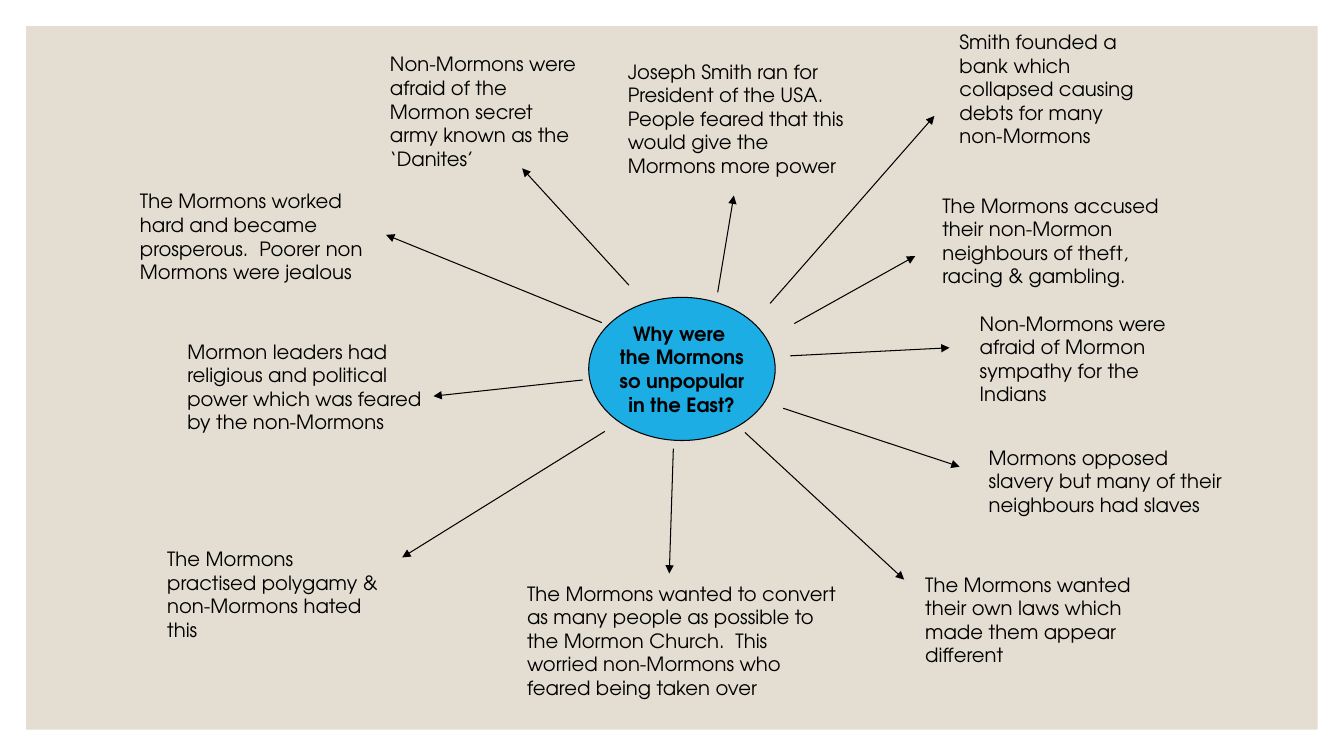
from dataclasses import dataclass

from lxml.etree import SubElement
from pptx import Presentation
from pptx.dml.color import RGBColor
from pptx.enum.shapes import MSO_CONNECTOR, MSO_SHAPE
from pptx.enum.text import MSO_ANCHOR, MSO_AUTO_SIZE, PP_ALIGN
from pptx.oxml.ns import qn
from pptx.util import Inches, Pt


@dataclass(frozen=True)
class Theme:
    font: str = "TeX Gyre Adventor"
    text_size: float = 14
    line_width: float = 0.75
    ink: str = "000000"
    panel: str = "E3DED1"
    hub: str = "1CADE4"


COLUMN = ROW = Inches(0.1)
COLUMNS, ROWS = 133.33, 75
MARGIN = 2.6

QUESTION = ["Why were ", "the Mormons", "so unpopular", "in the East?"]

REASONS = [
    ("Joseph Smith ran for President of the USA.  People feared that this would give the Mormons more power",
     (61.3, 5.4, 23.6, 12.9), (71.2, 29), (72.8, 19.4)),
    ("Smith founded a bank which collapsed causing debts for many non-Mormons",
     (94.2, 2.5, 20.8, 10.4), (76.4, 30.1), (92.7, 11.5)),
    ("The Mormons accused their non-Mormon neighbours of theft, racing & gambling.",
     (92.5, 18.7, 25.8, 8.1), (78.8, 32.1), (90.8, 25.4)),
    ("Non-Mormons were afraid of Mormon sympathy for the Indians",
     (96.2, 30.4, 24.2, 8.1), (78.4, 35.3), (94.2, 34.5)),
    ("Mormons opposed slavery but many of their neighbours had slaves",
     (97.1, 43.7, 25.3, 8.1), (77.7, 40.5), (95.2, 46.3)),
    ("The Mormons wanted their own laws which made them appear different",
     (90.8, 56.3, 22.5, 10.4), (73.9, 42.9), (89.7, 57.5)),
    ("The Mormons wanted to convert as many people as possible to the Mormon Church.  "
     "This worried non-Mormons who feared being taken over",
     (51.3, 57.2, 32.8, 12.8), (66.8, 44.5), (66.4, 56.9)),
    ("The Mormons practised polygamy & non-Mormons hated this",
     (15.6, 53.8, 23.2, 10.4), (60, 42.8), (39.9, 55.3)),
    ("Mormon leaders had religious and political power which was feared by the non-Mormons",
     (17.6, 33.2, 26.7, 10.6), (57.8, 37.7), (43, 39.3)),
    ("The Mormons worked hard and became prosperous.  Poorer non Mormons were jealous",
     (12.9, 18.3, 25.3, 10.4), (59.7, 32), (38.3, 23.3)),
    ("Non-Mormons were afraid of the Mormon secret army known as the ‘Danites’",
     (37.7, 4.7, 21.3, 12.8), (62.4, 28.3), (51.8, 16.7)),
]


def write(frame, lines, *, theme, bold=False, align=PP_ALIGN.LEFT,
          anchor=MSO_ANCHOR.TOP, wrap=True, fit=MSO_AUTO_SIZE.NONE):
    frame.word_wrap = wrap
    frame.auto_size = fit
    frame.vertical_anchor = anchor
    for index, line in enumerate(lines):
        paragraph = frame.add_paragraph() if index else frame.paragraphs[0]
        paragraph.alignment = align
        run = paragraph.add_run()
        run.text = line
        run.font.name = theme.font
        run.font.size = Pt(theme.text_size)
        run.font.bold = bold
        run.font.color.rgb = RGBColor.from_string(theme.ink)


class SpiderDiagram:
    def __init__(self, slide, theme):
        self.slide = slide
        self.theme = theme

    def place(self, left, top, width, height):
        return (round(left * COLUMN), round(top * ROW),
                round(width * COLUMN), round(height * ROW))

    def outline(self, line):
        line.color.rgb = RGBColor.from_string(self.theme.ink)
        line.width = Pt(self.theme.line_width)

    def filled(self, kind, box, colour):
        shape = self.slide.shapes.add_shape(kind, *self.place(*box))
        shape.shadow.inherit = False
        shape.fill.solid()
        shape.fill.fore_color.rgb = RGBColor.from_string(colour)
        return shape

    def panel(self, box):
        shape = self.filled(MSO_SHAPE.RECTANGLE, box, self.theme.panel)
        shape.line.fill.background()

    def hub(self, box, lines):
        shape = self.filled(MSO_SHAPE.OVAL, box, self.theme.hub)
        self.outline(shape.line)
        write(shape.text_frame, lines, theme=self.theme, bold=True,
              align=PP_ALIGN.CENTER, anchor=MSO_ANCHOR.MIDDLE, wrap=False)

    def label(self, box, text):
        shape = self.slide.shapes.add_textbox(*self.place(*box))
        write(shape.text_frame, [text], theme=self.theme,
              fit=MSO_AUTO_SIZE.SHAPE_TO_FIT_TEXT)

    def arrow(self, start, end):
        connector = self.slide.shapes.add_connector(
            MSO_CONNECTOR.STRAIGHT, *self.place(*start, *end))
        self.outline(connector.line)
        properties = connector.element.spPr
        SubElement(properties.find(qn("a:ln")), qn("a:tailEnd"), type="triangle")
        SubElement(properties, qn("a:effectLst"))


def main():
    presentation = Presentation()
    presentation.slide_width = round(COLUMNS * COLUMN)
    presentation.slide_height = ROWS * ROW
    slide = presentation.slides.add_slide(presentation.slide_layouts[6])
    diagram = SpiderDiagram(slide, Theme())
    diagram.panel((MARGIN, MARGIN, COLUMNS - 2 * MARGIN, ROWS - 2 * MARGIN))
    diagram.hub((58.4, 29.5, 18.5, 14.2), QUESTION)
    for text, box, start, end in REASONS:
        diagram.arrow(start, end)
        diagram.label(box, text)
    presentation.save("out.pptx")


if __name__ == "__main__":
    main()
